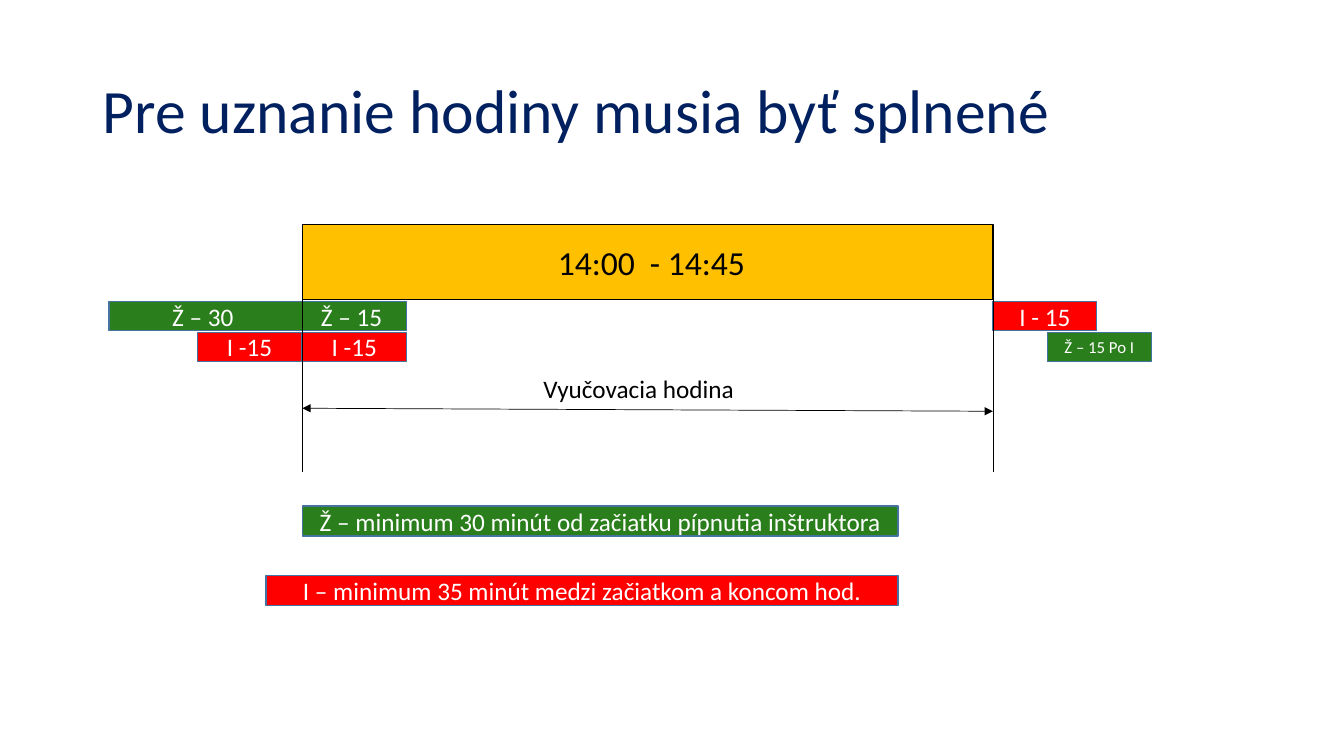
from lxml import etree
from pptx import Presentation
from pptx.dml.color import RGBColor
from pptx.enum.shapes import MSO_CONNECTOR, MSO_SHAPE
from pptx.enum.text import MSO_ANCHOR, MSO_AUTO_SIZE, PP_ALIGN
from pptx.oxml.ns import qn
from pptx.util import Inches, Pt

RECTANGLE = MSO_SHAPE.RECTANGLE
STRAIGHT = MSO_CONNECTOR.STRAIGHT
MIDDLE = MSO_ANCHOR.MIDDLE
NO_AUTOFIT = MSO_AUTO_SIZE.NONE
LEFT, CENTER = PP_ALIGN.LEFT, PP_ALIGN.CENTER

COLORS = {
    "navy": "002060",
    "amber": "FFC000",
    "green": "2A7E1C",
    "red": "FF0000",
    "outline": "43739E",
    "black": "000000",
    "white": "FFFFFF",
}
TITLE_ONLY = 5
LESSON_START, LESSON_END = 22.5, 73.88
LESSON_WIDTH = LESSON_END - LESSON_START
QUARTER = 7.73
BAR_HEIGHT = 3.87
UPPER_ROW, LOWER_ROW = 39.87, 43.95
RULE_RIGHT = 66.83


def color(name):
    return RGBColor.from_string(COLORS[name])


def write_text(shape, text, size=18, ink="white", align=CENTER, spacing=None):
    frame = shape.text_frame
    frame.auto_size = NO_AUTOFIT
    frame.word_wrap = True
    frame.vertical_anchor = MIDDLE
    paragraph = frame.paragraphs[0]
    paragraph.alignment = align
    paragraph.line_spacing = spacing
    run = paragraph.add_run()
    run.text = text
    run.font.name = "Calibri"
    run.font.size = Pt(size)
    run.font.color.rgb = color(ink)


class LessonSlide:
    """Draws elements on one slide, placed in percent of its width and height."""

    def __init__(self, presentation):
        self.width = presentation.slide_width
        self.height = presentation.slide_height
        self.slide = presentation.slides.add_slide(presentation.slide_layouts[TITLE_ONLY])
        self.shapes = self.slide.shapes

    def place(self, x, y):
        return round(self.width * x / 100), round(self.height * y / 100)

    def title(self, text, left, top, width, height):
        title = self.shapes.title
        title.left, title.top = self.place(left, top)
        title.width, title.height = self.place(width, height)
        write_text(title, text, size=44, ink="navy", align=LEFT, spacing=0.9)

    def bar(self, text, left, top, width, height=BAR_HEIGHT, fill="green",
            outline="outline", **text_format):
        shape = self.shapes.add_shape(
            RECTANGLE, *self.place(left, top), *self.place(width, height))
        shape.shadow.inherit = False
        shape.fill.solid()
        shape.fill.fore_color.rgb = color(fill)
        shape.line.color.rgb = color(outline)
        shape.line.width = Pt(1)
        write_text(shape, text, **text_format)

    def label(self, text, left, top, width, height):
        box = self.shapes.add_textbox(*self.place(left, top), *self.place(width, height))
        write_text(box, text, ink="black")

    def line(self, start, end, arrows=False):
        connector = self.shapes.add_connector(
            STRAIGHT, *self.place(*start), *self.place(*end))
        connector.line.color.rgb = color("black")
        connector.line.width = Pt(0.5)
        properties = connector._element.spPr
        if arrows:
            outline = properties.find(qn("a:ln"))
            for tag in ("a:headEnd", "a:tailEnd"):
                etree.SubElement(outline, qn(tag), type="triangle")
        etree.SubElement(properties, qn("a:effectLst"))


def main():
    presentation = Presentation()
    presentation.slide_width = Inches(13.33)
    presentation.slide_height = Inches(7.5)
    lesson = LessonSlide(presentation)

    lesson.title("Pre uznanie hodiny musia byť splnené", 6.9, 5.33, 86.25, 19.33)
    lesson.bar(" 14:00  - 14:45", LESSON_START, 29.73, LESSON_WIDTH, 9.87,
               fill="amber", outline="black", size=24, ink="black")

    for text, left, top, width, fill, size in (
        ("Ž – 15 ", LESSON_START, UPPER_ROW, QUARTER, "green", 18),
        ("I -15", LESSON_START, LOWER_ROW, QUARTER, "red", 18),
        ("I -15", 14.7, LOWER_ROW, QUARTER, "red", 18),
        ("Ž – 30 ", 8.1, UPPER_ROW, 14.4, "green", 18),
        ("I - 15", LESSON_END, UPPER_ROW, QUARTER, "red", 18),
        ("Ž – 15 Po I", 77.93, LOWER_ROW, QUARTER, "green", 12),
    ):
        lesson.bar(text, left, top, width, fill=fill, size=size)

    for text, left, top, fill in (
        ("I – minimum 35 minút medzi začiatkom a koncom hod.", 19.8, 76.13, "red"),
        ("Ž – minimum 30 minút od začiatku pípnutia inštruktora",
         LESSON_START, 66.93, "green"),
    ):
        lesson.bar(text, left, top, RULE_RIGHT - left, 4, fill=fill)

    for edge in (LESSON_START, LESSON_END):
        lesson.line((edge, 39.47), (edge, 62.4))
    lesson.line((LESSON_START, 54), (LESSON_END, 54.4), arrows=True)
    lesson.label("Vyučovacia hodina", 38.25, 48.8, 18.53, 5.2)

    presentation.save("out.pptx")


if __name__ == "__main__":
    main()
